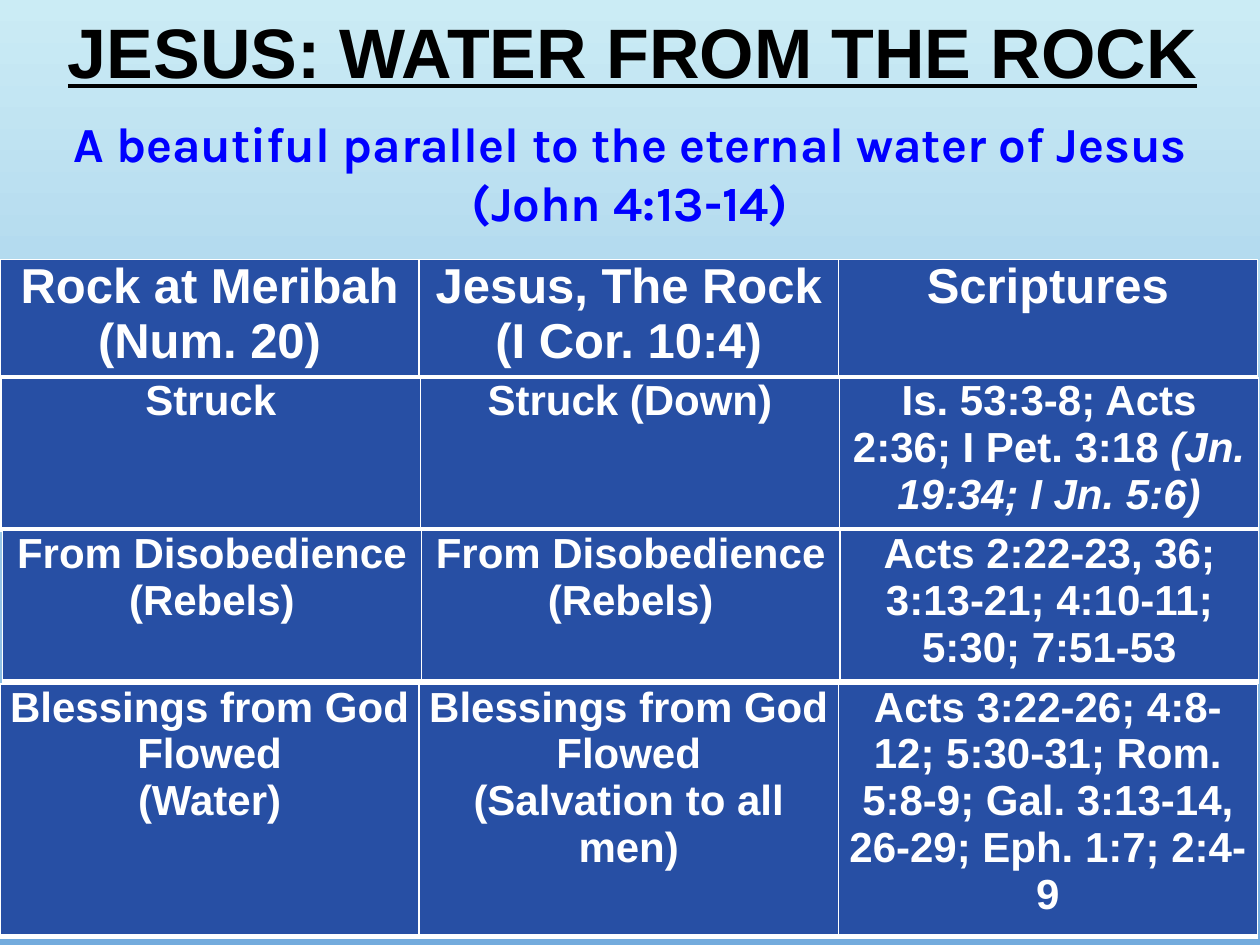
import pptx
import pptx.dml.color
import pptx.enum.text
import pptx.oxml
import pptx.oxml.ns
import pptx.util
from pptx.util import Inches

WHITE, NAVY = "FFFFFF", "274FA4"
CENTER = pptx.enum.text.PP_ALIGN.CENTER
MIDDLE = pptx.enum.text.MSO_ANCHOR.MIDDLE
TOP = pptx.enum.text.MSO_ANCHOR.TOP
BORDERS = {"lnL": 1, "lnR": 1, "lnT": 1, "lnB": 3}


def color(hex_value):
    return pptx.dml.color.RGBColor.from_string(hex_value)


def style(paragraph, size, font, hex_value):
    paragraph.alignment = CENTER
    paragraph.font.size = pptx.util.Pt(size)
    paragraph.font.name = font
    paragraph.font.bold = True
    paragraph.font.color.rgb = color(hex_value)


def paint_background(slide):
    fill = slide.background.fill
    fill.gradient()
    fill.gradient_angle = 270
    for stop, position, shade in zip(fill.gradient_stops, (0, 1), ("CBECF5", "73ABDD")):
        stop.position = position
        stop.color.rgb = color(shade)


def add_heading(slide, box, lines, size, font, hex_value, anchor):
    frame = slide.shapes.add_textbox(*map(Inches, box)).text_frame
    frame.word_wrap = True
    frame.vertical_anchor = anchor
    frame.text = "\n".join(lines)
    for paragraph in frame.paragraphs:
        style(paragraph, size, font, hex_value)
    return frame


def add_borders(cell):
    properties = cell._tc.get_or_add_tcPr()
    for side, points in BORDERS.items():
        properties.append(pptx.oxml.parse_xml(
            f'<a:{side} {pptx.oxml.ns.nsdecls("a")} w="{pptx.util.Pt(points)}">'
            f'<a:solidFill><a:srgbClr val="{WHITE}"/></a:solidFill></a:{side}>'))


def add_parallel(slide, box, size, entries):
    """One band of the comparison: a table with a single row."""
    table = slide.shapes.add_table(1, len(entries), *map(Inches, box)).table
    for column, cell, entry in zip(table.columns, table.rows[0].cells, entries):
        column.width = Inches(box[2] / len(entries))
        cell.margin_left = cell.margin_right = Inches(0.07)
        cell.margin_top = cell.margin_bottom = 0
        add_borders(cell)
        cell.fill.solid()
        cell.fill.fore_color.rgb = color(NAVY)
        cell.text = entry
        for paragraph in cell.text_frame.paragraphs:
            style(paragraph, size, "Arial", WHITE)
    return table


def main():
    deck = pptx.Presentation()
    deck.slide_width, deck.slide_height = Inches(10), Inches(7.5)
    slide = deck.slides.add_slide(deck.slide_layouts[6])
    paint_background(slide)

    # Title and subtitle
    title = add_heading(slide, (0.02, -0.01, 10, 0.91), ["JESUS: WATER FROM THE ROCK"],
                        40, "Arial", "000000", MIDDLE)
    title.paragraphs[0].font.underline = True
    title.paragraphs[0].line_spacing = 0.9
    add_heading(slide, (0, 0.85, 10, 1.04),
                ["A beautiful parallel to the eternal water of Jesus", "(John 4:13-14)"],
                28, "Karla", "0000FF", TOP)

    # Comparison bands
    add_parallel(slide, (0, 2.06, 9.98, 0.93), 28,
                 ["Rock at Meribah (Num. 20)", "Jesus, The Rock (I Cor. 10:4)", "Scriptures"])
    struck = add_parallel(slide, (0.01, 3, 9.98, 1.2), 24,
                          ["Struck", "Struck (Down)", "Is. 53:3-8; Acts 2:36; I Pet. 3:18 "])
    aside = struck.cell(0, 2).text_frame.paragraphs[0].add_run()
    aside.text = "(Jn. 19:34; I Jn. 5:6)"
    aside.font.italic = True
    add_parallel(slide, (0.02, 4.21, 9.97, 1.2), 24,
                 ["From Disobedience (Rebels)"] * 2
                 + ["Acts 2:22-23, 36; 3:13-21; 4:10-11; 5:30; 7:51-53"])
    add_parallel(slide, (0, 5.43, 9.98, 2), 24,
                 ["Blessings from God Flowed\n(Water)",
                  "Blessings from God Flowed\n(Salvation to all men)",
                  "Acts 3:22-26; 4:8-12; 5:30-31; Rom. 5:8-9; "
                  "Gal. 3:13-14, 26-29; Eph. 1:7; 2:4-9"])

    deck.save("out.pptx")


if __name__ == "__main__":
    main()
